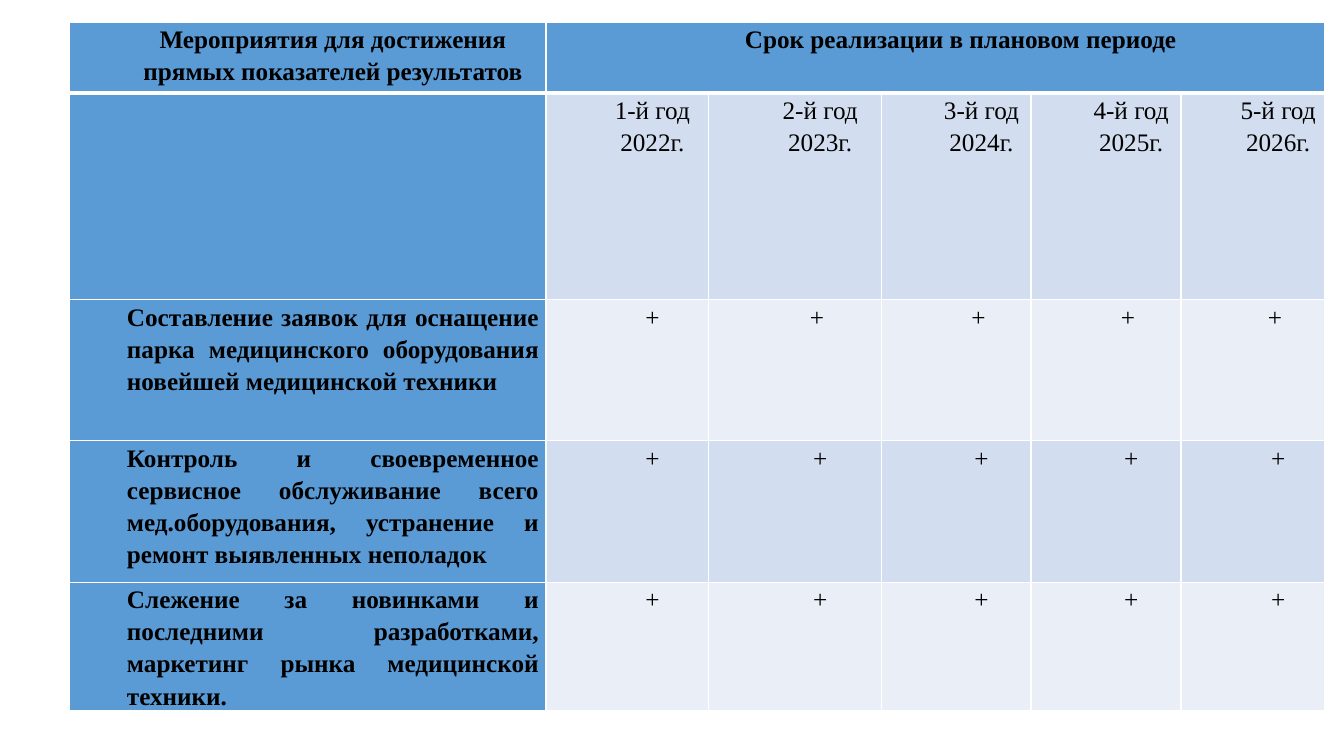
from lxml.etree import SubElement
from pptx import Presentation
from pptx.dml.color import RGBColor
from pptx.enum.text import PP_ALIGN as Align
from pptx.oxml.ns import qn
from pptx.util import Cm, Pt

BLUE, PALE, PALER = "5B9BD5", "D2DEEF", "EAEFF7"
COLUMN_WIDTHS = [12.01, 4.09, 4.37, 3.76, 3.78, 3.63]
ROW_HEIGHTS = [1.78, 5.21, 3.56, 3.56, 2.69]
YEARS = [f"{number}-й год\n{2021 + number}г." for number in range(1, 6)]
HEADERS = [
    "Мероприятия для достижения прямых показателей результатов",
    "Срок реализации в плановом периоде",
]
ACTIVITIES = [
    ("Составление заявок для оснащение парка медицинского оборудования "
     "новейшей медицинской техники", ["+"] + ["+ "] * 4),
    ("Контроль и своевременное сервисное обслуживание всего "
     "мед.оборудования, устранение и ремонт выявленных неполадок", ["+"] * 5),
    ("Слежение за новинками и последними разработками, маркетинг рынка "
     "медицинской техники. ", ["+"] * 5),
]
CELL_FORMAT = {"margin_left": Cm(0.18), "margin_right": Cm(0.18),
               "margin_top": 0, "margin_bottom": 0}
FONT_FORMAT = {"name": "Times New Roman", "size": Pt(18)}


def color(value):
    return RGBColor.from_string(value)


def apply_format(target, values):
    for name, value in values.items():
        setattr(target, name, value)


def set_borders(cell, top, bottom):
    properties = cell._tc.get_or_add_tcPr()
    widths = {"a:lnL": 1, "a:lnR": 1, "a:lnT": top, "a:lnB": bottom}
    for tag, width in widths.items():
        line = SubElement(properties, qn(tag), w=str(Pt(width)))
        fill = SubElement(line, qn("a:solidFill"))
        SubElement(fill, qn("a:srgbClr"), val="FFFFFF")


def write_text(cell, text, align, bold):
    cell.text = text
    for para in cell.text_frame.paragraphs:
        apply_format(para, {"alignment": align, "line_spacing": 1.15})
        para._p.get_or_add_pPr().set("marL", str(Cm(1.27)))
        for span in para.runs:
            apply_format(span.font, {**FONT_FORMAT, "bold": bold})
            span.font.color.rgb = color("000000")


def format_cell(cell, row, column):
    apply_format(cell, CELL_FORMAT)
    set_borders(cell, 3 if row == 1 else 1, 3 if row == 0 else 1)
    cell.fill.solid()
    band = PALE if row % 2 else PALER
    cell.fill.fore_color.rgb = color(BLUE if row == 0 or column == 0 else band)


def add_plan_table(page):
    frame = page.shapes.add_table(
        len(ROW_HEIGHTS), len(COLUMN_WIDTHS), Cm(1.75), Cm(0.56),
        Cm(sum(COLUMN_WIDTHS)), Cm(sum(ROW_HEIGHTS)))
    table = frame.table
    for column, width in zip(table.columns, COLUMN_WIDTHS):
        column.width = Cm(width)
    for row, height in zip(table.rows, ROW_HEIGHTS):
        row.height = Cm(height)

    contents = [HEADERS, ["", *YEARS]]
    contents += [[name, *marks] for name, marks in ACTIVITIES]
    for row in range(len(ROW_HEIGHTS)):
        for column in range(len(COLUMN_WIDTHS)):
            format_cell(table.cell(row, column), row, column)
        for column, text in enumerate(contents[row]):
            align = Align.JUSTIFY if row > 1 and column == 0 else Align.CENTER
            bold = row == 0 or column == 0
            write_text(table.cell(row, column), text, align, bold)
    table.cell(0, 1).merge(table.cell(0, 5))


def main():
    deck = Presentation()
    apply_format(deck, {"slide_width": Cm(33.87), "slide_height": Cm(19.05)})
    page = deck.slides.add_slide(deck.slide_layouts[6])
    add_plan_table(page)
    deck.save("out.pptx")


if __name__ == "__main__":
    main()
